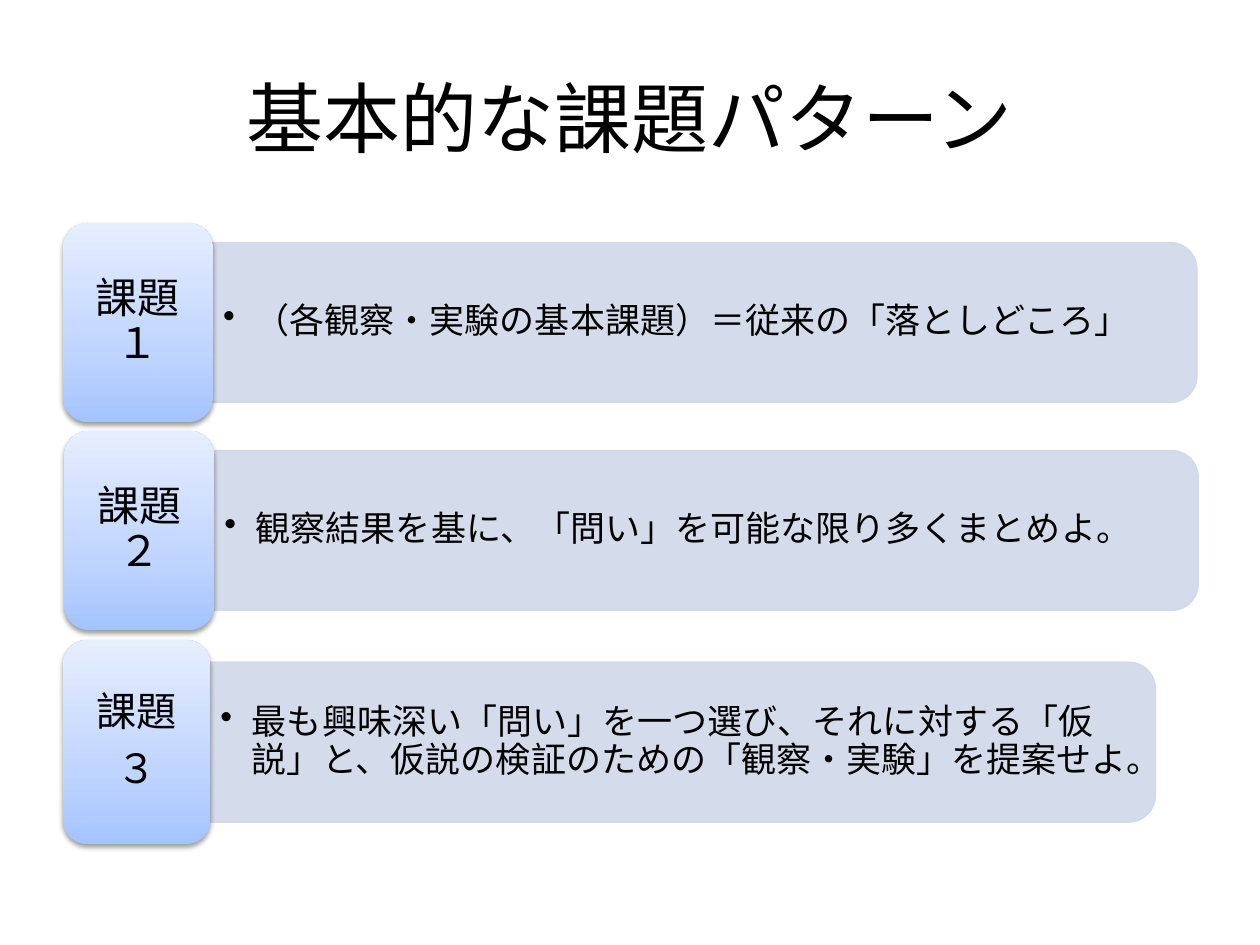
from dataclasses import dataclass

from pptx import Presentation
from pptx.dml.color import RGBColor
from pptx.enum.shapes import MSO_SHAPE
from pptx.enum.text import MSO_ANCHOR, PP_ALIGN
from pptx.oxml import parse_xml
from pptx.oxml.ns import nsdecls, qn
from pptx.util import Inches, Pt

ROUNDED = MSO_SHAPE.ROUNDED_RECTANGLE
ROUNDED_TOP = MSO_SHAPE.ROUND_2_SAME_RECTANGLE
MIDDLE = MSO_ANCHOR.MIDDLE
CENTER = PP_ALIGN.CENTER

FONT = "Cabin"
BLACK = "000000"
BAR_COLOR = "D0D8E8"
TILE_STOPS = ((0, "A4C4FF"), (35, "BFD4FF"), (100, "E6EEFF"))
BAR_HEIGHT = 1.27
TASK_HEIGHT = 1.14


@dataclass
class Task:
    label: tuple[str, ...]
    label_size: int
    description: str
    left: float
    top: float
    tile_width: float
    tile_height: float
    bar_width: float


TASKS = (
    Task(("課題１",), 24, "（各観察・実験の基本課題）＝従来の「落としどころ」",
         0.5, 1.77, 1.19, 1.58, 7.81),
    Task(("課題２",), 24, "観察結果を基に、「問い」を可能な限り多くまとめよ。",
         0.51, 3.42, 1.19, 1.58, 7.81),
    Task(("課題", "３"), 23,
         "最も興味深い「問い」を一つ選び、それに対する「仮説」と、"
         "仮説の検証のための「観察・実験」を提案せよ。",
         0.5, 5.08, 1.17, 1.62, 7.5),
)


def rgb(color: str) -> RGBColor:
    return RGBColor.from_string(color)


def style_paragraph(paragraph, size: float, space_after: float | None = None) -> None:
    paragraph.font.name = FONT
    paragraph.font.size = Pt(size)
    paragraph.font.color.rgb = rgb(BLACK)
    if space_after is not None:
        paragraph.line_spacing = 0.9
        paragraph.space_after = Pt(space_after)


def set_frame(frame, inset_x: float, inset_y: float) -> None:
    frame.word_wrap = True
    frame.vertical_anchor = MIDDLE
    frame.margin_left = frame.margin_right = Inches(inset_x)
    frame.margin_top = frame.margin_bottom = Inches(inset_y)


def add_bar(slide, left: float, middle: float, width: float) -> None:
    """Draw a bar rounded at its right end: a turned shape with a rounded top."""
    bar = slide.shapes.add_shape(
        ROUNDED_TOP,
        Inches(left + (width - BAR_HEIGHT) / 2), Inches(middle - width / 2),
        Inches(BAR_HEIGHT), Inches(width))
    bar.rotation = 90
    bar.shadow.inherit = False
    bar.fill.solid()
    bar.fill.fore_color.rgb = rgb(BAR_COLOR)
    bar.line.color.rgb = rgb(BAR_COLOR)
    bar.line.width = Pt(0.75)
    for color in bar._element.spPr.iter(qn("a:srgbClr")):
        color.append(parse_xml(f'<a:alpha {nsdecls("a")} val="90000"/>'))


def add_description(slide, left: float, middle: float, width: float, text: str) -> None:
    box = slide.shapes.add_textbox(
        Inches(left), Inches(middle - TASK_HEIGHT / 2), Inches(width), Inches(TASK_HEIGHT))
    set_frame(box.text_frame, 0.08, 0.04)
    paragraph = box.text_frame.paragraphs[0]
    paragraph.text = text
    paragraph.level = 1
    style_paragraph(paragraph, 20, 3)
    properties = paragraph._p.get_or_add_pPr()
    properties.set("marL", str(Inches(0.25)))
    properties.set("indent", str(-Inches(0.25)))
    properties.append(parse_xml(f'<a:buChar {nsdecls("a")} char="•"/>'))
    # The schema wants the bullet ahead of the default run properties.
    properties.append(properties.find(qn("a:defRPr")))


def add_gradient_and_shadow(shape) -> None:
    stops = "".join(
        f'<a:gs pos="{position * 1000}"><a:srgbClr val="{color}"/></a:gs>'
        for position, color in TILE_STOPS)
    gradient = parse_xml(
        f'<a:gradFill {nsdecls("a")} rotWithShape="1"><a:gsLst>{stops}</a:gsLst>'
        '<a:lin ang="16200000" scaled="0"/></a:gradFill>')
    shadow = parse_xml(
        f'<a:outerShdw {nsdecls("a")} blurRad="{Pt(3.1)}" dist="{Pt(1.6)}" dir="5400000" '
        f'rotWithShape="0"><a:srgbClr val="{BLACK}"><a:alpha val="38000"/></a:srgbClr>'
        '</a:outerShdw>')
    shape.fill.solid()
    shape.line.fill.background()
    shape.shadow.inherit = False
    properties = shape._element.spPr
    properties.replace(properties.find(qn("a:solidFill")), gradient)
    properties.find(qn("a:effectLst")).append(shadow)


def add_tile(slide, task: Task) -> None:
    tile = slide.shapes.add_shape(
        ROUNDED, Inches(task.left), Inches(task.top),
        Inches(task.tile_width), Inches(task.tile_height))
    add_gradient_and_shadow(tile)
    frame = tile.text_frame
    set_frame(frame, 0.1, 0.05)
    frame.text = "\n".join(task.label)
    for paragraph in frame.paragraphs:
        paragraph.alignment = CENTER
        style_paragraph(paragraph, task.label_size, 8)


def add_task(slide, task: Task) -> None:
    bar_left = task.left + task.tile_width
    middle = task.top + task.tile_height / 2
    add_bar(slide, bar_left, middle, task.bar_width)
    add_description(slide, bar_left, middle, task.bar_width - 0.06, task.description)
    add_tile(slide, task)


def main() -> None:
    presentation = Presentation()
    presentation.slide_width = Inches(10)
    presentation.slide_height = Inches(7.5)
    slide = presentation.slides.add_slide(presentation.slide_layouts.get_by_name("Title Only"))

    title = slide.shapes.title
    title.left, title.top = Inches(0.5), Inches(0.3)
    title.width, title.height = Inches(9), Inches(1.25)
    title.text_frame.text = "基本的な課題パターン"
    title.text_frame.vertical_anchor = MIDDLE
    heading = title.text_frame.paragraphs[0]
    heading.alignment = CENTER
    style_paragraph(heading, 44)

    for task in TASKS:
        add_task(slide, task)
    presentation.save("out.pptx")


if __name__ == "__main__":
    main()
